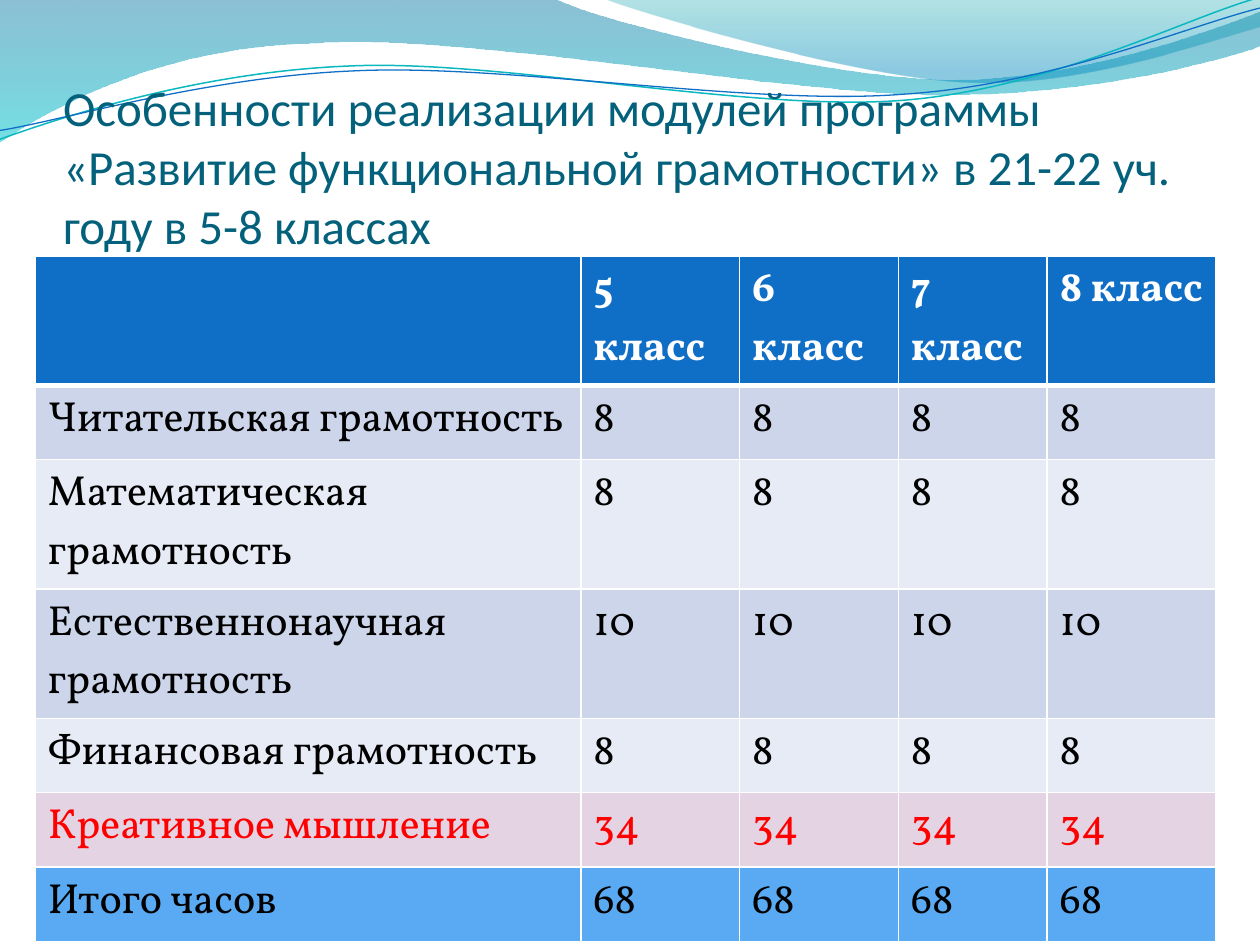
from lxml.etree import SubElement
from pptx import Presentation
from pptx.dml.color import RGBColor
from pptx.enum.text import MSO_ANCHOR, MSO_AUTO_SIZE, PP_ALIGN
from pptx.oxml.ns import qn
from pptx.util import Inches, Pt

THEME = {
    "title": {"name": "Calibri", "size": Pt(28), "color": "04617B", "bold": False},
    "header": {"name": "Vollkorn", "size": Pt(24), "color": "FFFFFF", "bold": True},
    "body": {"name": "Vollkorn", "size": Pt(24), "color": "000000", "bold": False},
    "accent": {"name": "Vollkorn", "size": Pt(24), "color": "FF0000", "bold": False},
    "blue": "0F6FC6", "teal": "0AB8BF", "dark_band": "CCD5EA", "light_band": "E7EBF5",
    "pink": "E3D3E3", "total": "59AAF2", "border": "FFFFFF",
}


def set_font(font, style):
    for name, value in style.items():
        if name == "color":
            font.color.rgb = RGBColor.from_string(value)
        else:
            setattr(font, name, value)


def add_wave(shapes, segments, close):
    """Draw a path whose segments are points (2 numbers) or cubic curves (6 numbers)."""
    points = [(Inches(segment[i]), Inches(segment[i + 1]))
              for segment in segments for i in range(0, len(segment), 2)]
    builder = shapes.build_freeform(*points[0])
    builder.add_line_segments(points[1:], close=close)
    wave = builder.convert_to_shape()
    wave.shadow.inherit = False
    lines = wave._element.iter(qn("a:lnTo"))
    lines = iter(list(lines))
    for segment in segments[1:]:
        first = next(lines)
        if len(segment) == 6:
            curve = first.makeelement(qn("a:cubicBezTo"))
            first.addprevious(curve)
            for line in (first, next(lines), next(lines)):
                curve.append(line[0])
                line.getparent().remove(line)
    return wave


presentation = Presentation()
presentation.slide_width, presentation.slide_height = Inches(10), Inches(7.5)
slide = presentation.slides.add_slide(presentation.slide_layouts[5])
shapes = slide.shapes

# Filled waves: outline, then gradient stops as (position, colour, opacity %)
filled_waves = [
    ([(0, 0), (4.4, -0.01), (4.76, 0.17, 6.64, 0.63, 7.58, 0.63),
      (8.53, 0.63, 9.58, 0.26, 10, 0.09), (10.01, 0.36),
      (9.83, 0.44, 8.7, 0.76, 7.46, 0.75), (6.22, 0.75, 3.82, 0.28, 2.57, 0.34),
      (1.29, 0.36, 0.46, 0.83, -0.01, 1.13), (0, 0)],
     [(0, "0074A1", 45), (1, "00C6CF", 55)]),
    ([(4.79, -0.01), (5.09, 0.11, 6.82, 0.62, 7.69, 0.65),
      (8.56, 0.69, 9.61, 0.32, 10, 0.21), (10, 0), (4.79, -0.01)],
     [(0, "00A1A9", 30), (0.8, "008BBF", 45)]),
]
for outline, stops in filled_waves:
    wave = add_wave(shapes, outline, close=True)
    wave.line.fill.background()
    wave.fill.gradient()
    wave.fill.gradient_angle = 270
    for stop, (position, color, opacity) in zip(wave.fill.gradient_stops, stops):
        stop.position = position
        stop.color.rgb = RGBColor.from_string(color)
        color_element = stop._gs.find(qn("a:srgbClr"))
        SubElement(color_element, qn("a:alpha"), val=str(opacity * 1000))

# Thin waves, tilted after drawing
line_waves = [
    ([(-0.02, 0.87), (0.47, 0.72, 1.58, 0.41, 2.78, 0.42),
      (3.96, 0.42, 5.91, 0.93, 7.12, 0.9), (8.32, 0.87, 9.4, 0.36, 10, 0.22)],
     THEME["teal"], 0.85),
    ([(-0.02, 0.8), (0.46, 0.75, 1.64, 0.45, 2.83, 0.46),
      (4.03, 0.46, 5.96, 0.89, 7.16, 0.85), (8.35, 0.83, 9.42, 0.42, 10.02, 0.3)],
     THEME["blue"], 0.75),
]
for outline, color, width in line_waves:
    wave = add_wave(shapes, outline, close=False)
    wave.rotation = 357.3
    wave.fill.background()
    wave.line.color.rgb = RGBColor.from_string(color)
    wave.line.width = Pt(width)

# Title, moved in front of the waves
title = shapes.title
shapes._spTree.append(title._element)
title.left, title.top, title.width, title.height = (
    Inches(value) for value in (0.5, 0.77, 9, 1.25))
title.text = ("Особенности реализации модулей программы «Развитие функциональной "
              "грамотности» в 21-22 уч. году в 5-8 классах")
frame_format = {
    "margin_left": 0, "margin_right": 0, "margin_top": Inches(0.05), "margin_bottom": 0,
    "vertical_anchor": MSO_ANCHOR.BOTTOM, "word_wrap": True,
    "auto_size": MSO_AUTO_SIZE.NONE,
}
for name, value in frame_format.items():
    setattr(title.text_frame, name, value)
title_paragraph = title.text_frame.paragraphs[0]
title_paragraph.alignment = PP_ALIGN.LEFT
set_font(title_paragraph.runs[0].font, THEME["title"])

# Table of hours: label, value for each class, fill, text style
grades = [5, 6, 7, 8]
hours = [
    ("Читательская грамотность", 8, "dark_band", "body"),
    ("Математическая грамотность", 8, "light_band", "body"),
    ("Естественнонаучная грамотность", 10, "dark_band", "body"),
    ("Финансовая грамотность", 8, "light_band", "body"),
    ("Креативное мышление", 34, "pink", "accent"),
    ("Итого часов", 68, "total", "body"),
]
rows = [([""] + [f"{grade} класс" for grade in grades], "blue", "header")]
rows += [([label] + [str(value)] * len(grades), fill, style)
         for label, value, fill, style in hours]
column_widths = [4.33, 1.26, 1.26, 1.18, 1.34]
row_height = Inches(0.59)
table = shapes.add_table(
    len(rows), len(column_widths), Inches(0.28), Inches(2.03),
    Inches(sum(column_widths)), row_height * len(rows)).table
for column, width in zip(table.columns, column_widths):
    column.width = Inches(width)

for row_index, (texts, fill, style) in enumerate(rows):
    table.rows[row_index].height = row_height
    for column_index, text in enumerate(texts):
        cell = table.cell(row_index, column_index)
        if text:
            cell.text = text
            set_font(cell.text_frame.paragraphs[0].runs[0].font, THEME[style])
        properties = cell._tc.get_or_add_tcPr()
        for side in ("lnL", "lnR", "lnT", "lnB"):
            thick = (row_index, side) in ((0, "lnB"), (1, "lnT"))
            border = SubElement(properties, qn(f"a:{side}"), w=str(Pt(3 if thick else 1)))
            border_fill = SubElement(border, qn("a:solidFill"))
            SubElement(border_fill, qn("a:srgbClr"), val=THEME["border"])
        cell.fill.solid()
        cell.fill.fore_color.rgb = RGBColor.from_string(THEME[fill])

presentation.save("out.pptx")
